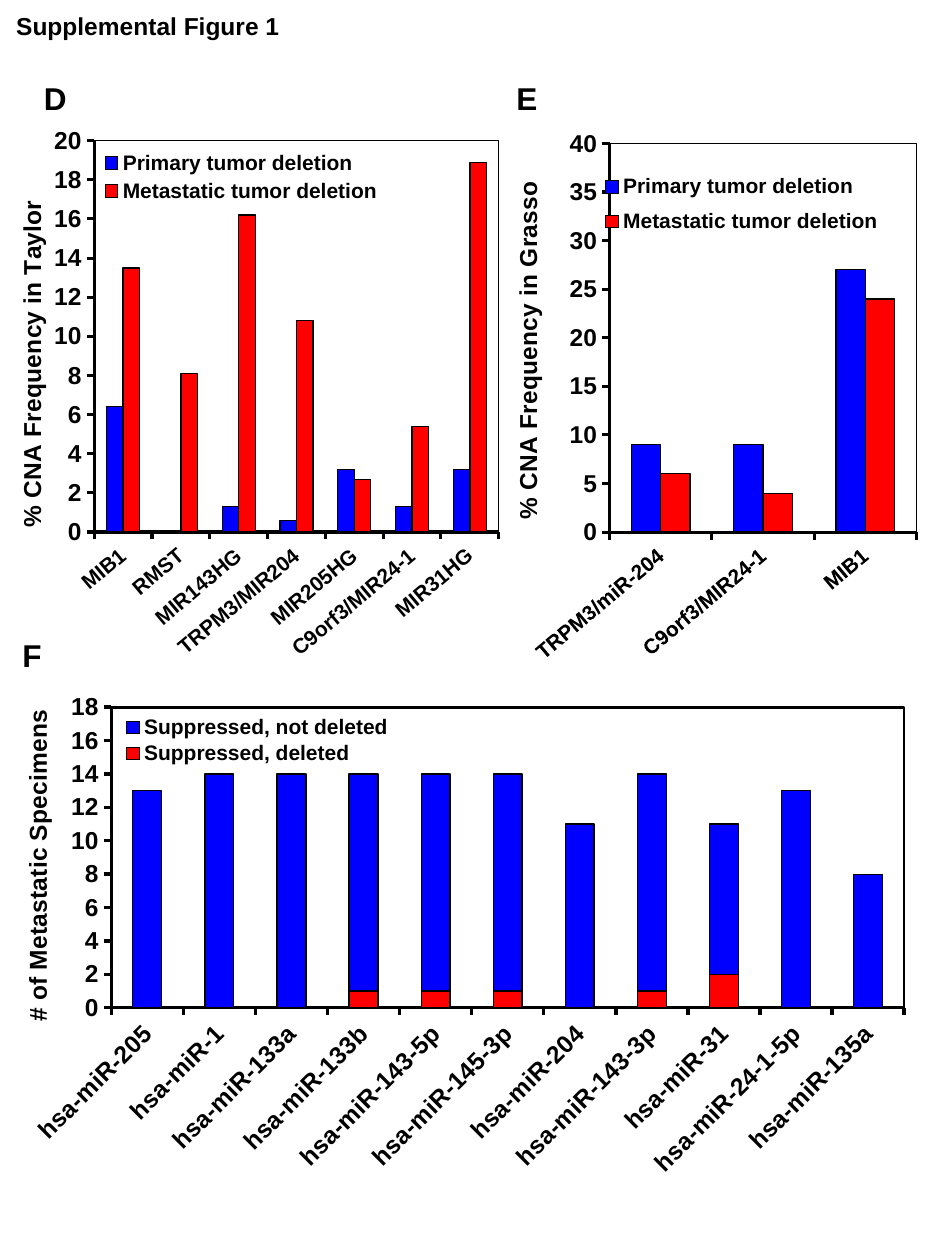
"""Build the supplemental figure slide with three column charts of deletion frequency."""
from dataclasses import dataclass

from lxml.etree import SubElement
from pptx import Presentation
from pptx.chart.data import CategoryChartData
from pptx.dml.color import RGBColor
from pptx.enum.chart import XL_CHART_TYPE as ChartType
from pptx.enum.chart import XL_LEGEND_POSITION as LegendPosition
from pptx.enum.chart import XL_TICK_MARK as TickMark
from pptx.enum.text import MSO_AUTO_SIZE as AutoSize
from pptx.oxml import parse_xml
from pptx.oxml.ns import nsdecls, qn
from pptx.util import Inches, Pt


@dataclass(frozen=True)
class Theme:
    font: str = "Arial"
    ink: RGBColor = RGBColor(0, 0, 0)
    blue: RGBColor = RGBColor(0, 0, 255)
    red: RGBColor = RGBColor(255, 0, 0)
    panel_size: int = 18
    title_size: int = 14
    chart_size: int = 12
    bar_line: float = 0.75


class FigureSlide:
    def __init__(self, slide, theme):
        self.slide = slide
        self.theme = theme

    def style_font(self, font, size):
        font.name = self.theme.font
        font.size = Pt(size)
        font.bold = True
        font.color.rgb = self.theme.ink

    def style_line(self, line, width):
        line.color.rgb = self.theme.ink
        line.width = Pt(width)

    def add_label(self, text, box, size, wrap=False):
        shape = self.slide.shapes.add_textbox(*map(Inches, box))
        frame = shape.text_frame
        frame.word_wrap = wrap
        frame.auto_size = AutoSize.SHAPE_TO_FIT_TEXT
        paragraph = frame.paragraphs[0]
        paragraph.text = text
        self.style_font(paragraph.font, size)

    def set_layout(self, parent, index, x, y, width=None, height=None, inner=False):
        for old_layout in parent.findall(qn("c:layout")):
            parent.remove(old_layout)
        layout = parse_xml(f"<c:layout {nsdecls('c')}><c:manualLayout/></c:layout>")
        values = {"layoutTarget": "inner" if inner else None, "xMode": "edge",
                  "yMode": "edge", "x": x, "y": y, "w": width, "h": height}
        for name, value in values.items():
            if value is not None:
                SubElement(layout[0], qn(f"c:{name}")).set("val", str(value))
        parent.insert(index, layout)

    def frame_plot(self, plot_area, width):
        plot_area.append(parse_xml(
            f"<c:spPr {nsdecls('c', 'a')}><a:noFill/><a:ln w='{Pt(width)}'><a:solidFill>"
            f"<a:srgbClr val='{self.theme.ink}'/></a:solidFill></a:ln></c:spPr>"))

    def style_axis(self, axis, size, line_width):
        axis.has_major_gridlines = False
        axis.major_tick_mark = TickMark.OUTSIDE
        axis.minor_tick_mark = TickMark.NONE
        self.style_font(axis.tick_labels.font, size)
        self.style_line(axis.format.line, line_width)

    def add_chart(self, kind, box, title, categories, series, maximum, step, plot_box,
                  legend_box, title_at, label_angle, label_size=12, axis_line=1.75,
                  frame_line=0.75):
        data = CategoryChartData()
        data.categories = categories
        for name, values, _ in series:
            data.add_series(name, values)
        chart = self.slide.shapes.add_chart(kind, *map(Inches, box), data).chart
        chart.has_title = False
        self.style_font(chart.font, self.theme.chart_size)

        plot = chart.plots[0]
        plot.gap_width = 150
        plot.vary_by_categories = False
        if kind == ChartType.COLUMN_STACKED:
            plot.overlap = 100
        for bars, (_, _, color) in zip(plot.series, series):
            bars.format.fill.solid()
            bars.format.fill.fore_color.rgb = color
            bars.invert_if_negative = False
            self.style_line(bars.format.line, self.theme.bar_line)

        category_axis, value_axis = chart.category_axis, chart.value_axis
        self.style_axis(category_axis, label_size, axis_line)
        self.style_axis(value_axis, self.theme.title_size, axis_line)
        value_axis.minimum_scale = 0
        value_axis.maximum_scale = maximum
        value_axis.major_unit = step
        value_axis.tick_labels.number_format = "#,##0"
        value_axis.tick_labels.number_format_is_linked = False
        paragraph = value_axis.axis_title.text_frame.paragraphs[0]
        paragraph.text = title
        self.style_font(paragraph.font, self.theme.title_size)

        chart.has_legend = True
        chart.legend.position = LegendPosition.RIGHT
        chart.legend.include_in_layout = False
        self.style_font(chart.legend.font, self.theme.chart_size)

        root = chart._chartSpace
        plot_area = root.xpath(".//c:plotArea")[0]
        self.frame_plot(plot_area, frame_line)
        self.set_layout(plot_area, 0, *plot_box, inner=True)
        self.set_layout(root.xpath(".//c:legend")[0], 1, *legend_box)
        self.set_layout(root.xpath(".//c:valAx/c:title")[0], 1, *title_at)
        for selector, angle in ((".//c:catAx/c:txPr/a:bodyPr", label_angle),
                                (".//c:valAx/c:title//a:bodyPr", -90)):
            body = root.xpath(selector)[0]
            body.set("rot", str(angle * 60000))
            body.set("vert", "horz")


def main():
    presentation = Presentation()
    presentation.slide_width = Inches(7.5)
    presentation.slide_height = Inches(10)
    theme = Theme()
    figure = FigureSlide(presentation.slides.add_slide(presentation.slide_layouts[6]), theme)

    figure.add_label("Supplemental Figure 1", (0.03, 0.04, 2.31, 0.34), theme.title_size, True)
    figure.add_chart(
        ChartType.COLUMN_CLUSTERED, (0.09, 0.98, 4.01, 4.29), "% CNA Frequency in Taylor",
        ["MIB1", "RMST", "MIR143HG", "TRPM3/MIR204", "MIR205HG", "C9orf3/MIR24-1", "MIR31HG"],
        [("Primary tumor deletion", [6.4, 0, 1.3, 0.6, 3.2, 1.3, 3.2], theme.blue),
         ("Metastatic tumor deletion", [13.5, 8.1, 16.2, 10.8, 2.7, 5.4, 18.9], theme.red)],
        maximum=20, step=2, plot_box=(0.164, 0.032, 0.801, 0.724),
        legend_box=(0.17, 0.042, 0.57, 0.115), title_at=(0, 0.134), label_angle=-40)
    figure.add_chart(
        ChartType.COLUMN_CLUSTERED, (4, 1.03, 3.41, 4.3), "% CNA Frequency in Grasso",
        ["TRPM3/miR-204", "C9orf3/MIR24-1", "MIB1"],
        [("Primary tumor deletion", [9, 9, 27], theme.blue),
         ("Metastatic tumor deletion", [6, 4, 24], theme.red)],
        maximum=40, step=5, plot_box=(0.246, 0.022, 0.714, 0.72),
        legend_box=(0.218, 0.058, 0.67, 0.153), title_at=(0.008, 0.086), label_angle=-40)
    figure.add_chart(
        ChartType.COLUMN_STACKED, (0.1, 5.41, 7.25, 4.23), "# of Metastatic Specimens",
        [f"hsa-miR-{number}" for number in (
            "205", "1", "133a", "133b", "143-5p", "145-3p", "204", "143-3p", "31",
            "24-1-5p", "135a")],
        [("Suppressed, deleted", [0, 0, 0, 1, 1, 1, 0, 1, 2, 0, 0], theme.red),
         ("Suppressed, not deleted", [13, 14, 14, 13, 13, 13, 11, 13, 9, 13, 8], theme.blue)],
        maximum=18, step=2, plot_box=(0.108, 0.048, 0.868, 0.564),
        legend_box=(0.113, 0.058, 0.31, 0.105), title_at=(0.005, 0.044), label_angle=-45,
        label_size=theme.title_size, axis_line=2, frame_line=1.5)
    for letter, left, top in (("D", 0.25, 0.58), ("E", 4, 0.58), ("F", 0.08, 5)):
        figure.add_label(letter, (left, top, 0.37, 0.4), theme.panel_size)

    presentation.save("out.pptx")


if __name__ == "__main__":
    main()
